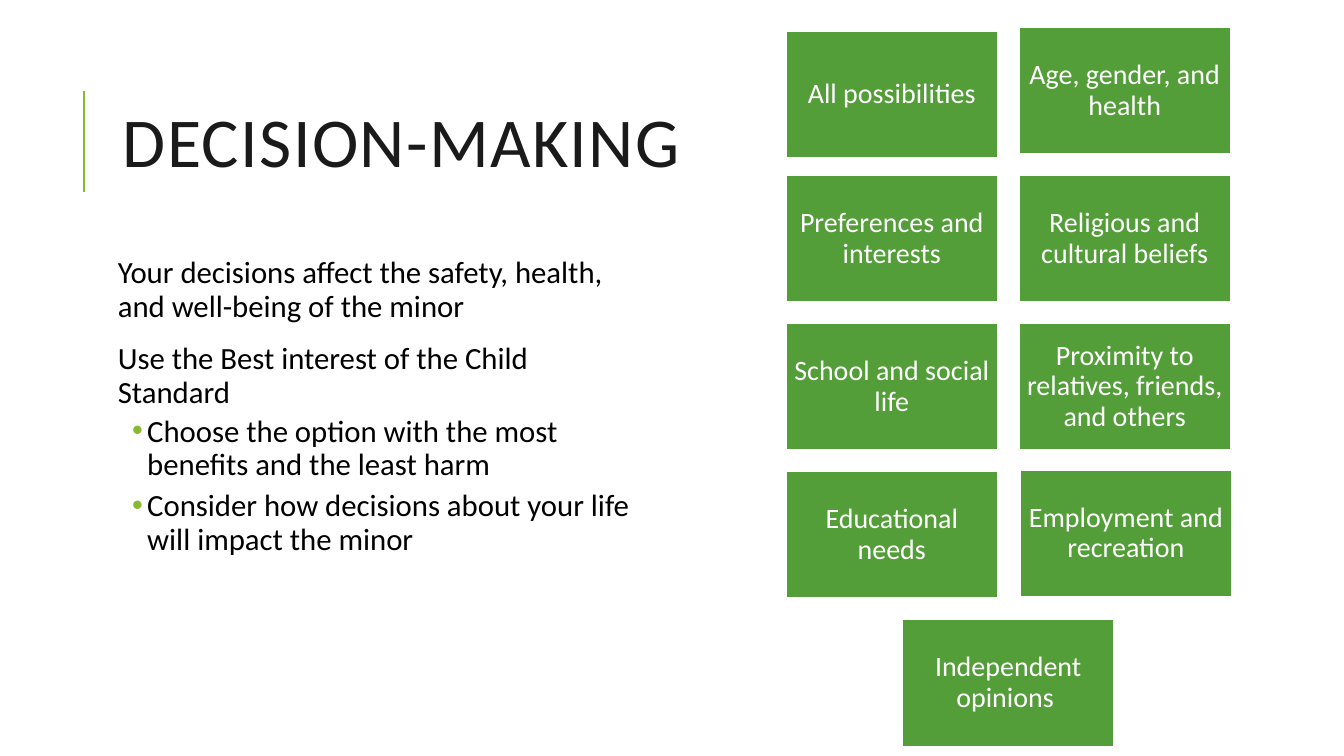
from lxml.etree import SubElement
from pptx import Presentation
from pptx.dml.color import RGBColor as RGB
from pptx.enum.shapes import MSO_CONNECTOR as CONN, MSO_SHAPE as SHAPE
from pptx.enum.text import MSO_ANCHOR as ANCHOR, MSO_AUTO_SIZE as FIT, PP_ALIGN as ALIGN
from pptx.oxml.ns import qn
from pptx.util import Cm, Pt

COLORS = {"accent": "8AB833", "box": "549E39", "title": "1A1A1A",
          "body": "000000", "white": "FFFFFF"}


def rgb(name):
    return RGB.from_string(COLORS[name])


def write(p, text, size, color, **paragraph_format):
    """Fill paragraph p with one run and apply the paragraph settings."""
    for key, value in paragraph_format.items():
        setattr(p, key, value)
    r = p.add_run()
    r.text = text
    r.font.name, r.font.size = "Calibri", Pt(size)
    r.font.color.rgb = rgb(color)
    return r


prs = Presentation()
prs.slide_width, prs.slide_height = Cm(33.87), Cm(19.05)
s = prs.slides.add_slide(prs.slide_layouts[1])
title, body = s.placeholders

# Accent line beside the title
rule = s.shapes.add_connector(CONN.STRAIGHT, Cm(2.12), Cm(4.83), Cm(2.12), Cm(2.3))
rule.line.color.rgb = rgb("accent")
rule.line.width = Pt(1.5)
SubElement(rule._element.spPr, qn("a:effectLst"))

# Title
title.left, title.top, title.width, title.height = Cm(2.84), Cm(1.63), Cm(27), Cm(4.17)
tf = title.text_frame
tf.auto_size, tf.vertical_anchor = FIT.NONE, ANCHOR.MIDDLE
r = write(tf.paragraphs[0], "DECISION-MAKING", 50, "title",
          alignment=ALIGN.LEFT, line_spacing=0.8)
r.font._element.set("spc", "100")

# Body list
body.left, body.top, body.width, body.height = Cm(2.84), Cm(6.35), Cm(13.2), Cm(11.18)
tf = body.text_frame
tf.auto_size = FIT.NONE
for side in ("left", "top", "right", "bottom"):
    setattr(tf, f"margin_{side}", Cm(0.13))

points = [
    (0, "Your decisions affect the safety, health, and well-being of the minor"),
    (0, "Use the Best interest of the Child Standard"),
    (1, "Choose the option with the most benefits and the least harm"),
    (1, "Consider how decisions about your life will impact the minor"),
]
for i, (level, text) in enumerate(points):
    p = tf.add_paragraph() if i else tf.paragraphs[0]
    before, after = (2, 4) if level else (12, 2)
    write(p, text, 22, "body", level=level, line_spacing=0.9,
          space_before=Pt(before), space_after=Pt(after))
    pPr = p._p.get_or_add_pPr()
    pPr.set("marL", str(Cm(0.74) if level else 0))
    pPr.set("indent", str(Cm(-0.38) if level else 0))
    if level:
        SubElement(SubElement(pPr, qn("a:buClr")), qn("a:srgbClr"), val=COLORS["accent"])
        SubElement(pPr, qn("a:buChar"), char="•")
    else:
        SubElement(pPr, qn("a:buNone"))

# Factor boxes: two columns, the last box centred below them
BOX_W, BOX_H = 5.33, 3.2
LEFT, TOP = 19.81, 0.69
COL_STEP, ROW_STEP = 5.87, 3.73
factors = [
    "All possibilities", "Age, gender, and health",
    "Preferences and interests", "Religious and cultural beliefs",
    "School and social life", "Proximity to relatives, friends, and others",
    "Educational needs", "Employment and recreation",
    "Independent opinions ",
]
nudges = {0: (0, 0.1), 7: (0.03, -0.04)}
for i, text in enumerate(factors):
    row, col = divmod(i, 2)
    if i == len(factors) - 1:
        col = 0.5
    dx, dy = nudges.get(i, (0, 0))
    sp = s.shapes.add_shape(SHAPE.RECTANGLE, Cm(LEFT + col * COL_STEP + dx),
                            Cm(TOP + row * ROW_STEP + dy), Cm(BOX_W), Cm(BOX_H))
    sp.shadow.inherit = False
    sp.fill.solid()
    sp.fill.fore_color.rgb = rgb("box")
    sp.line.color.rgb = rgb("white")
    sp.line.width = Pt(1.25)
    tf = sp.text_frame
    tf.word_wrap, tf.vertical_anchor = True, ANCHOR.MIDDLE
    for side in ("left", "top", "right", "bottom"):
        setattr(tf, f"margin_{side}", Cm(0.2))
    write(tf.paragraphs[0], text, 20, "white", alignment=ALIGN.CENTER, line_spacing=0.9)

prs.save("out.pptx")
